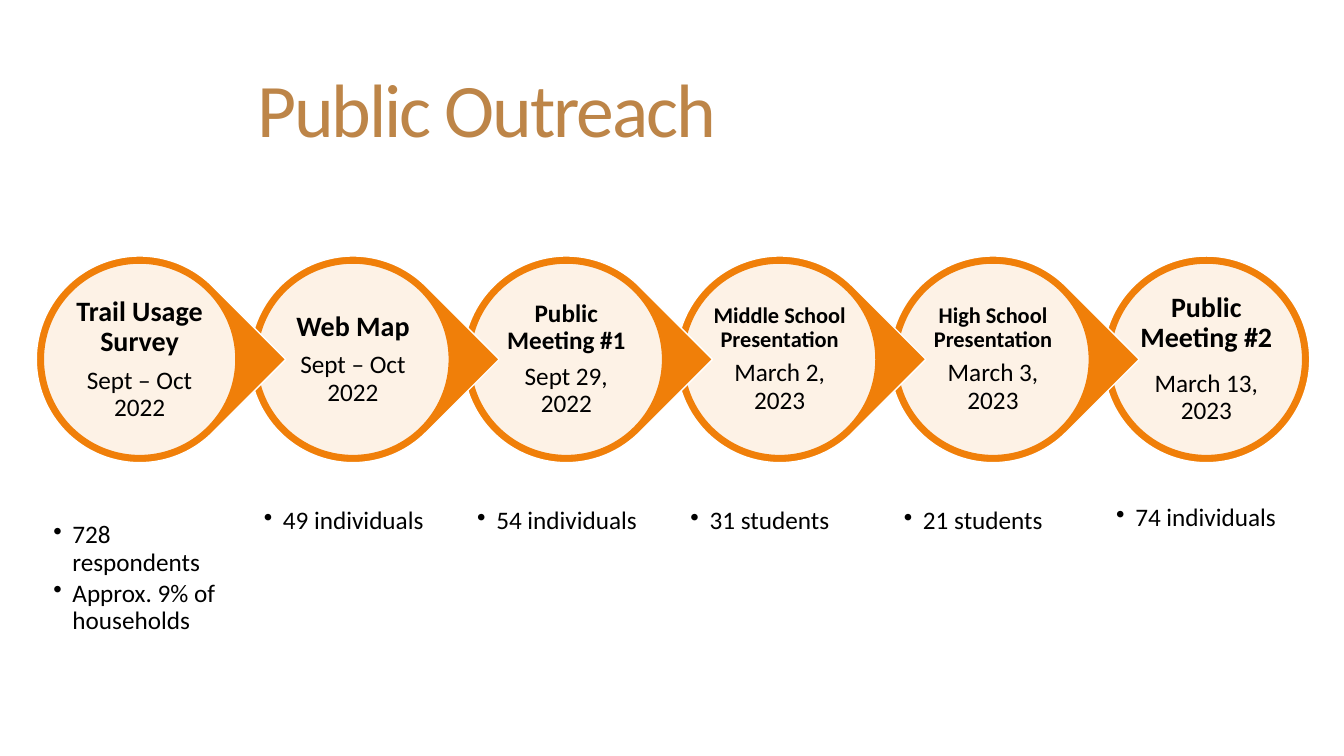
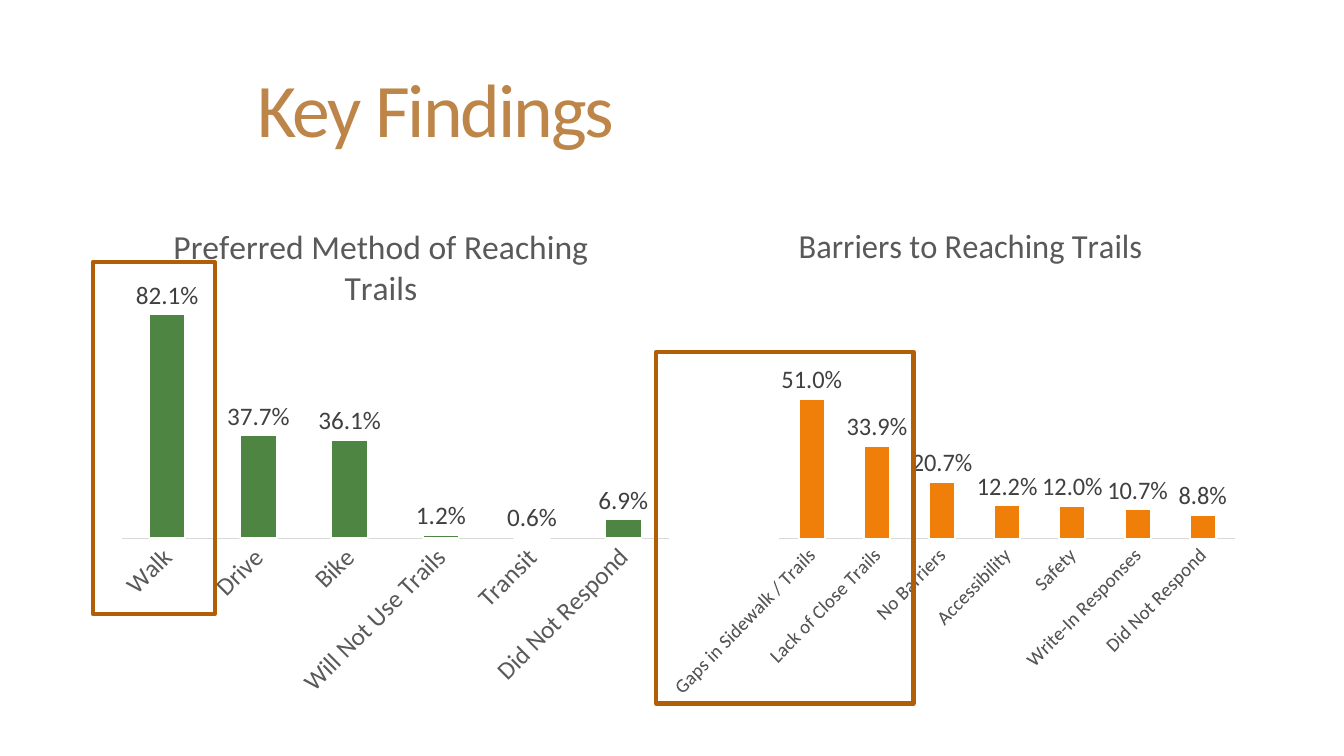
import pptx
import pptx.chart.data
import pptx.dml.color
import pptx.enum.chart
import pptx.enum.shapes
import pptx.enum.text
import pptx.oxml
import pptx.oxml.ns
import pptx.util

Inches = pptx.util.Inches
Pt = pptx.util.Pt
SHAPES = pptx.enum.shapes.MSO_SHAPE
ANCHORS = pptx.enum.text.MSO_ANCHOR
ALIGNMENTS = pptx.enum.text.PP_ALIGN

FONT = "Calibri"
COLORS = {
    "title": "BD8548",
    "orange": "F07F09",
    "green": "4E8542",
    "highlight": "B25E07",
    "white": "FFFFFF",
    "black": "000000",
    "chart_text": "595959",
    "label": "404040",
    "axis": "D9D9D9",
}

FIRST_STAGE_LEFT = 0.36
LAST_STAGE_LEFT = 10.94
STAGE_TOP = 2.54
STAGE_SIZE = 2.05
DISC_INSET = 0.07
CAPTION_INSET = 0.34

STAGES = [
    {"name": "Trail Usage Survey", "date": "Sept – Oct 2022", "size": 20, "margin": 0.03,
     "results": ["728 respondents", "Approx. 9% of households"],
     "results_top": 5.08, "results_margin": 0.1},
    {"name": "Web Map", "date": "Sept – Oct 2022", "size": 20, "margin": 0.03,
     "results": ["49 individuals"]},
    {"name": "Public Meeting #1", "date": "Sept 29, 2022", "size": 18, "margin": 0.03,
     "results": ["54 individuals"]},
    {"name": "Middle School Presentation", "date": "March 2, 2023", "size": 16,
     "margin": 0.02, "results": ["31 students"]},
    {"name": "High School Presentation", "date": "March 3, 2023", "size": 16,
     "margin": 0.02, "results": ["21 students"]},
    {"name": "Public Meeting #2", "date": "March 13, 2023", "size": 20, "margin": 0.03,
     "space": 12, "results": ["74 individuals"],
     "results_top": 4.95, "results_margin": 0.06},
]

CHARTS = [
    {"title": "Preferred Method of Reaching Trails", "box": (0.92, 2, 5.72, 5.3),
     "plot": (0.05, 0.12, 0.95, 0.51), "color": "green", "axis_size": 18,
     "values": {"Walk": 0.821, "Drive": 0.377, "Bike": 0.361,
                "Will Not Use Trails": 0.012, "Transit": 0.006,
                "Did Not Respond": 0.069}},
    {"title": "Barriers to Reaching Trails", "box": (6.64, 2, 5.78, 5.15),
     "plot": (0.16, 0.12, 0.81, 0.53), "color": "orange", "axis_size": 14,
     "values": {"Gaps in Sidewalk / Trails": 0.51, "Lack of Close Trails": 0.339,
                "No Barriers": 0.207, "Accessibility": 0.122, "Safety": 0.12,
                "Write-In Responses": 0.107, "Did Not Respond": 0.088}},
]

HIGHLIGHTS = [(0.92, 2.6, 1.21, 3.49), (6.51, 3.49, 2.55, 3.49)]


def rgb(color):
    return pptx.dml.color.RGBColor.from_string(COLORS[color])


def set_format(target, values):
    for name, value in values.items():
        setattr(target, name, value)


def format_font(font, size, color, bold=False):
    set_format(font, {"name": FONT, "size": Pt(size), "bold": bold})
    font.color.rgb = rgb(color)


def inches(box):
    return [Inches(length) for length in box]


def add_titled_slide(presentation, title):
    slide = presentation.slides.add_slide(presentation.slide_layouts[5])
    shape = slide.shapes.title
    set_format(shape, dict(zip(("left", "top", "width", "height"),
                               inches((2.45, 0.4, 9.97, 1.45)))))
    frame = shape.text_frame
    set_format(frame, {"text": title, "word_wrap": True,
                       "vertical_anchor": ANCHORS.MIDDLE})
    paragraph = frame.paragraphs[0]
    set_format(paragraph, {"alignment": ALIGNMENTS.LEFT, "line_spacing": 0.9})
    run = paragraph.runs[0]
    format_font(run.font, 54, "title")
    run.font._element.set("spc", "-150")
    return slide


def add_outlined_shape(slide, kind, box, line_color, line_width, fill_color=None):
    shape = slide.shapes.add_shape(kind, *inches(box))
    shape.shadow.inherit = False
    if fill_color:
        shape.fill.solid()
        shape.fill.fore_color.rgb = rgb(fill_color)
    else:
        shape.fill.background()
    shape.line.color.rgb = rgb(line_color)
    shape.line.width = Pt(line_width)
    return shape


def set_opacity(shape, percent):
    color = shape.fill._xPr.find(".//" + pptx.oxml.ns.qn("a:srgbClr"))
    alpha = pptx.oxml.parse_xml(
        f'<a:alpha {pptx.oxml.ns.nsdecls("a")} val="{percent * 1000}"/>')
    color.append(alpha)


def add_text_frame(slide, box, margin, anchor):
    frame = slide.shapes.add_textbox(*inches(box)).text_frame
    set_format(frame, {"word_wrap": True, "vertical_anchor": anchor})
    set_format(frame, dict.fromkeys(
        ("margin_left", "margin_top", "margin_right", "margin_bottom"), Inches(margin)))
    return frame


def add_paragraph(frame, text, size, space_after, bold=False, bullet=False):
    first = frame.paragraphs[0]
    paragraph = frame.add_paragraph() if first.runs else first
    if bullet:
        properties = paragraph._p.get_or_add_pPr()
        properties.set("marL", str(Inches(0.19)))
        properties.set("indent", str(Inches(-0.19)))
        properties.append(pptx.oxml.parse_xml(
            f'<a:buChar {pptx.oxml.ns.nsdecls("a")} char="•"/>'))
    set_format(paragraph, {
        "line_spacing": 0.9, "space_after": Pt(space_after),
        "alignment": ALIGNMENTS.LEFT if bullet else ALIGNMENTS.CENTER})
    run = paragraph.add_run()
    run.text = text
    format_font(run.font, size, "black", bold)


def add_stage(slide, stage, left, is_last):
    """Draw one circle of the timeline, pointing right unless it is the last."""
    kind = SHAPES.OVAL if is_last else SHAPES.TEAR
    pointer = add_outlined_shape(
        slide, kind, (left, STAGE_TOP, STAGE_SIZE, STAGE_SIZE), "white", 1, "orange")
    pointer.rotation = 0 if is_last else 45

    disc_left = left + DISC_INSET
    disc_size = STAGE_SIZE - 2 * DISC_INSET
    disc = add_outlined_shape(
        slide, SHAPES.OVAL, (disc_left, STAGE_TOP + DISC_INSET, disc_size, disc_size),
        "orange", 1, "white")
    set_opacity(disc, 90)

    caption_size = STAGE_SIZE - 2 * CAPTION_INSET
    caption = add_text_frame(
        slide, (left + CAPTION_INSET, STAGE_TOP + CAPTION_INSET, caption_size, caption_size),
        stage["margin"], ANCHORS.MIDDLE)
    for text, size, bold in ((stage["name"], stage["size"], True),
                             (stage["date"], 18, False)):
        add_paragraph(caption, text, size, stage.get("space", size * 0.35), bold=bold)

    results = add_text_frame(
        slide, (disc_left, stage.get("results_top", 4.97), disc_size, 0.8),
        stage.get("results_margin", 0.07), ANCHORS.TOP)
    for text in stage["results"]:
        add_paragraph(results, text, 18, 2.7, bullet=True)


def set_plot_area(chart, plot):
    """Place the inner plot area by fractions of the chart's size."""
    plot_area = chart._chartSpace.chart.plotArea
    for layout in plot_area.findall(pptx.oxml.ns.qn("c:layout")):
        plot_area.remove(layout)
    lengths = "".join(f'<c:{name} val="{value}"/>' for name, value in zip("xywh", plot))
    plot_area.insert(0, pptx.oxml.parse_xml(
        f'<c:layout {pptx.oxml.ns.nsdecls("c")}><c:manualLayout>'
        '<c:layoutTarget val="inner"/><c:xMode val="edge"/><c:yMode val="edge"/>'
        f'{lengths}</c:manualLayout></c:layout>'))


def format_axes(chart, axis_size):
    category_axis = chart.category_axis
    set_format(category_axis, {
        "major_tick_mark": pptx.enum.chart.XL_TICK_MARK.NONE,
        "has_major_gridlines": False})
    format_font(category_axis.tick_labels.font, axis_size, "chart_text")
    body = category_axis._element.find(".//" + pptx.oxml.ns.qn("a:bodyPr"))
    body.set("rot", "-2700000")
    body.set("vert", "horz")
    category_axis.format.line.color.rgb = rgb("axis")
    category_axis.format.line.width = Pt(0.75)
    set_format(chart.value_axis, {
        "visible": False, "has_major_gridlines": False,
        "minimum_scale": 0, "maximum_scale": 1})


def add_column_chart(slide, content):
    data = pptx.chart.data.CategoryChartData(number_format="0.0%")
    data.categories = list(content["values"])
    data.add_series("Series 1", list(content["values"].values()))
    chart = slide.shapes.add_chart(
        pptx.enum.chart.XL_CHART_TYPE.COLUMN_CLUSTERED, *inches(content["box"]), data).chart
    format_font(chart.font, 10, "black")
    set_format(chart, {"has_legend": False, "has_title": True})

    title = chart.chart_title.text_frame
    title.text = content["title"]
    format_font(title.paragraphs[0].runs[0].font, 24, "chart_text")

    set_plot_area(chart, content["plot"])
    format_axes(chart, content["axis_size"])

    plot = chart.plots[0]
    set_format(plot, {"gap_width": 150, "overlap": -25,
                      "vary_by_categories": False, "has_data_labels": True})
    labels = plot.data_labels
    set_format(labels, {
        "show_value": True, "number_format": "0.0%", "number_format_is_linked": False,
        "position": pptx.enum.chart.XL_LABEL_POSITION.OUTSIDE_END})
    format_font(labels.font, 18, "label")

    columns = plot.series[0].format
    columns.fill.solid()
    columns.fill.fore_color.rgb = rgb(content["color"])
    columns.line.color.rgb = rgb("white")
    columns.line.width = Pt(1.5)


def add_outreach_slide(presentation):
    slide = add_titled_slide(presentation, "Public Outreach")
    last = len(STAGES) - 1
    step = (LAST_STAGE_LEFT - FIRST_STAGE_LEFT) / last
    # Right to left, so that each pointer lies over the next circle.
    for index in range(last, -1, -1):
        add_stage(slide, STAGES[index], FIRST_STAGE_LEFT + index * step, index == last)


def add_findings_slide(presentation):
    slide = add_titled_slide(presentation, "Key Findings")
    for content in CHARTS:
        add_column_chart(slide, content)
    for box in HIGHLIGHTS:
        add_outlined_shape(slide, SHAPES.RECTANGLE, box, "highlight", 3)


def main():
    presentation = pptx.Presentation()
    set_format(presentation, {"slide_width": Inches(13.33), "slide_height": Inches(7.5)})
    add_outreach_slide(presentation)
    add_findings_slide(presentation)
    presentation.save("out.pptx")


if __name__ == "__main__":
    main()
